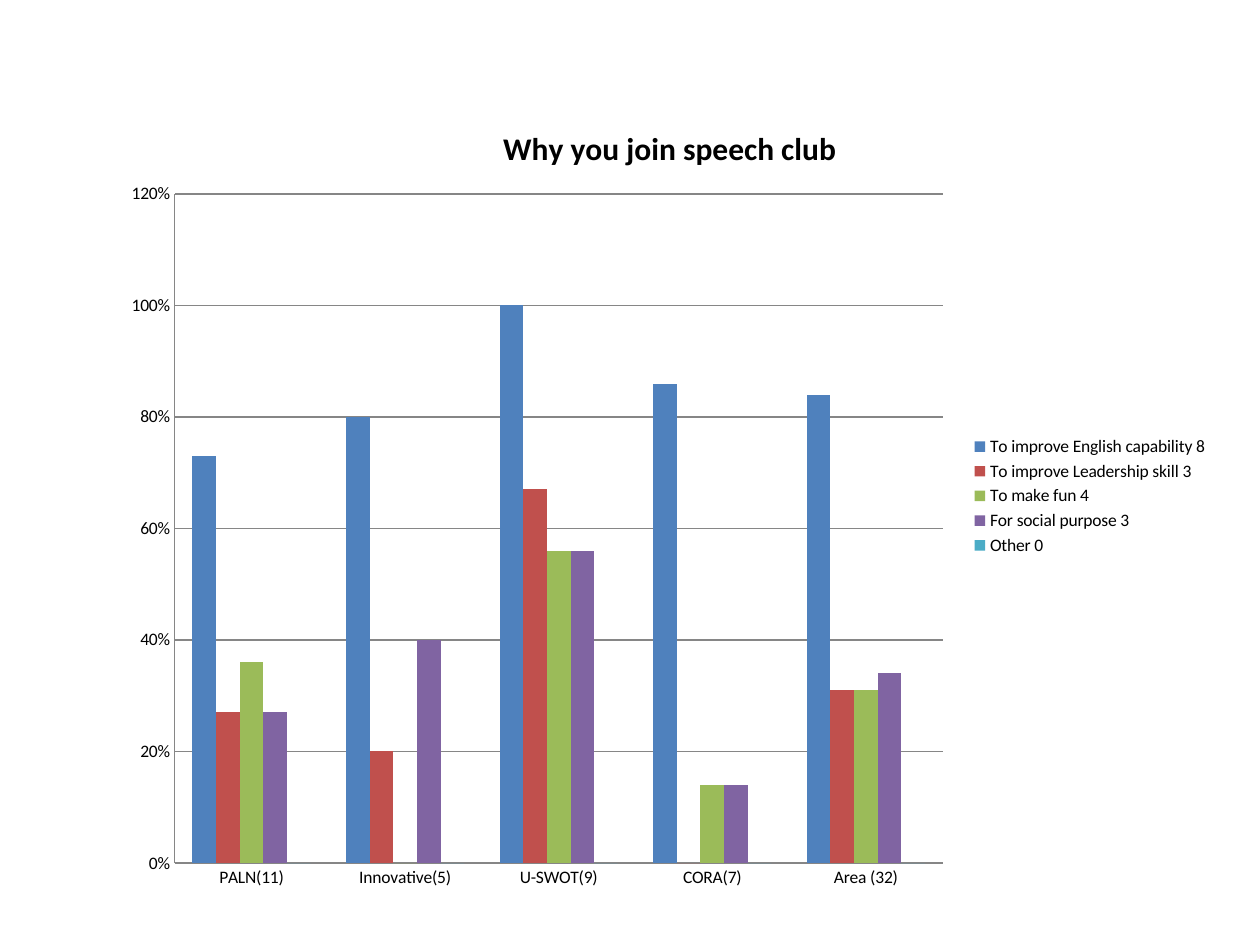
from lxml.etree import SubElement
from pptx import Presentation
from pptx.chart.data import CategoryChartData
from pptx.dml.color import RGBColor
from pptx.enum.chart import XL_CHART_TYPE as ChartType, XL_LEGEND_POSITION as LegendPos
from pptx.enum.chart import XL_TICK_MARK as TickMark
from pptx.oxml.ns import qn
from pptx.util import Pt

PX = 914400 // 126
BLACK = RGBColor(0x00, 0x00, 0x00)
GRAY = RGBColor(0x86, 0x86, 0x86)
BLUE = RGBColor(0x4F, 0x81, 0xBD)
RED = RGBColor(0xC0, 0x50, 0x4D)
GREEN = RGBColor(0x9B, 0xBB, 0x59)
PURPLE = RGBColor(0x80, 0x64, 0xA2)
AQUA = RGBColor(0x4B, 0xAC, 0xC6)

TITLE = "Why you join speech club"
CLUBS = ["PALN(11)", "Innovative(5)", "U-SWOT(9)", "CORA(7)", "Area (32)"]
REASONS = [
    ("To improve English capability 8", BLUE, (0.73, 0.8, 1, 0.86, 0.84)),
    ("To improve Leadership skill 3", RED, (0.27, 0.2, 0.67, 0, 0.31)),
    ("To make fun 4", GREEN, (0.36, 0, 0.56, 0.14, 0.31)),
    ("For social purpose 3", PURPLE, (0.27, 0.4, 0.56, 0.14, 0.34)),
    ("Other 0", AQUA, (0, 0, 0, 0, 0)),
]


def set_font(font, size, bold=False):
    """Apply the slide's typeface at the given size."""
    for name, value in {"name": "Calibri", "size": Pt(size), "bold": bold}.items():
        setattr(font, name, value)
    font.color.rgb = BLACK


def set_layout(parent, index, values):
    """Give a chart part a manual layout in fractions of the chart."""
    for old in parent.findall(qn("c:layout")):
        parent.remove(old)
    layout = SubElement(parent, qn("c:layout"))
    parent.insert(index, layout)
    manual = SubElement(layout, qn("c:manualLayout"))
    for tag, value in values.items():
        SubElement(manual, qn(f"c:{tag}")).set("val", str(value))


def style_axes(chart):
    """Format both axes and the gridlines."""
    value_axis = chart.value_axis
    limits = {"minimum_scale": 0, "maximum_scale": 1.2, "major_unit": 0.2,
              "has_major_gridlines": True}
    for name, value in limits.items():
        setattr(value_axis, name, value)
    labels = value_axis.tick_labels
    labels.number_format, labels.number_format_is_linked = "0%", False
    for axis in (value_axis, chart.category_axis):
        axis.major_tick_mark = axis.minor_tick_mark = TickMark.NONE
    for part in (value_axis, chart.category_axis, value_axis.major_gridlines):
        part.format.line.color.rgb = GRAY
        part.format.line.width = Pt(0.75)


def add_reasons_chart(s, x, y, w, h):
    """Place the chart of joining reasons per club in the given box."""
    data = CategoryChartData(number_format="0%")
    data.categories = CLUBS
    for name, _, values in REASONS:
        data.add_series(name, values)
    box = [n * PX for n in (x, y, w, h)]
    chart = s.shapes.add_chart(ChartType.COLUMN_CLUSTERED, *box, data).chart
    set_font(chart.font, 10)

    chart.has_title = True
    p = chart.chart_title.text_frame.paragraphs[0]
    r = p.add_run()
    r.text = TITLE
    set_font(r.font, 18, bold=True)

    chart.has_legend = True
    chart.legend.position = LegendPos.RIGHT
    chart.legend.include_in_layout = False
    set_font(chart.legend.font, 10)

    plot = chart.plots[0]
    for name, value in {"gap_width": 150, "overlap": 0, "vary_by_categories": False}.items():
        setattr(plot, name, value)
    for series, (_, color, _) in zip(plot.series, REASONS):
        series.format.fill.solid()
        series.format.fill.fore_color.rgb = color
    style_axes(chart)

    set_layout(chart.chart_title._element, 1,
               {"xMode": "edge", "yMode": "edge", "x": 0.35, "y": 0.04})
    set_layout(chart._chartSpace.chart.plotArea, 0,
               {"layoutTarget": "inner", "xMode": "edge", "yMode": "edge",
                "x": 0.06, "y": 0.13, "w": 0.69, "h": 0.82})


def main():
    """Build and save the slide."""
    prs = Presentation()
    prs.slide_width, prs.slide_height = 1260 * PX, 945 * PX
    s = prs.slides.add_slide(prs.slide_layouts[6])
    add_reasons_chart(s, 108, 88, 1113, 816)
    prs.save("out.pptx")


if __name__ == "__main__":
    main()
